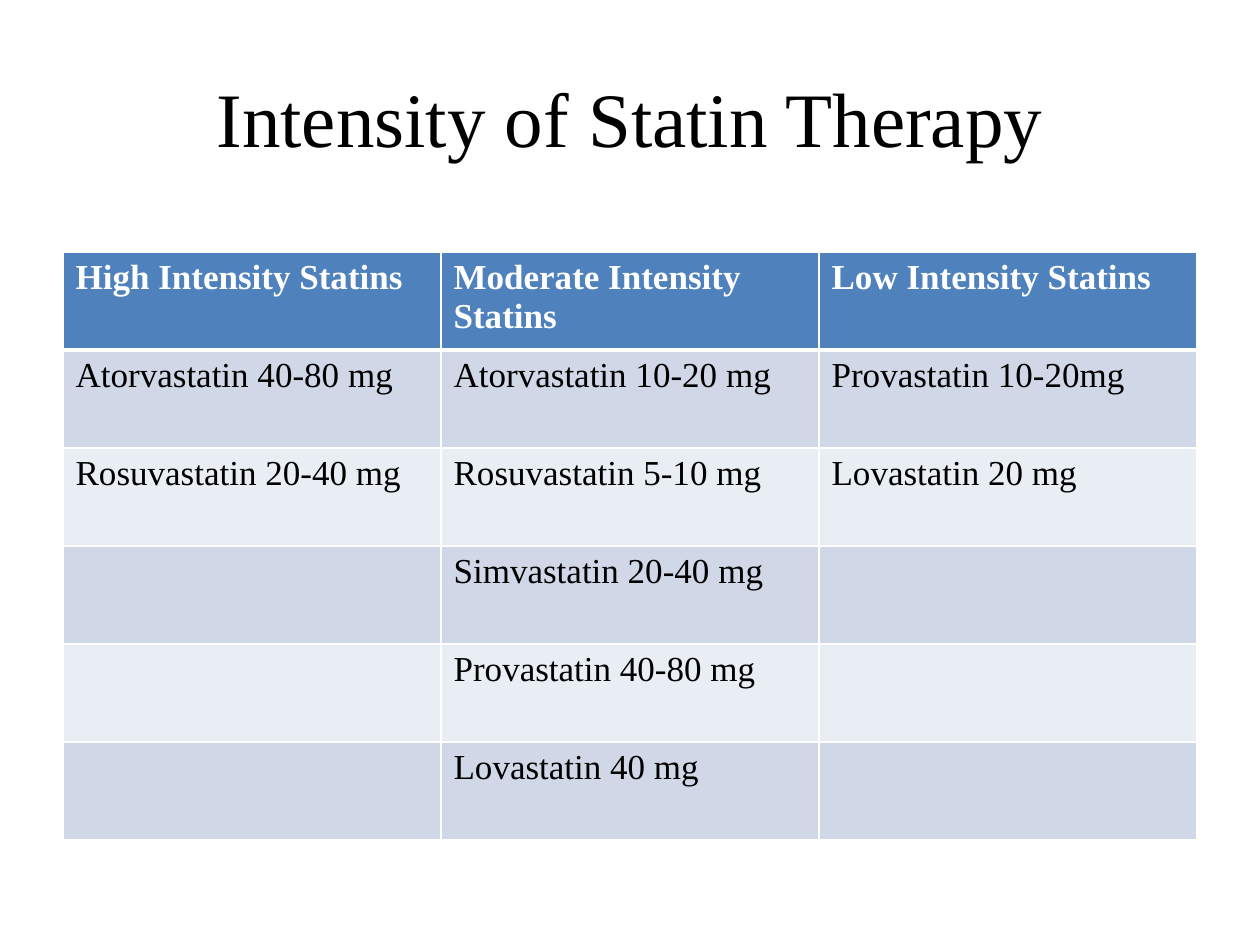
from lxml import etree
from pptx import Presentation
from pptx.dml.color import RGBColor
from pptx.enum.text import MSO_ANCHOR, PP_ALIGN
from pptx.oxml.ns import qn
from pptx.util import Inches, Pt

MIDDLE = MSO_ANCHOR.MIDDLE
CENTER = PP_ALIGN.CENTER
FONT = "Times New Roman"
COLORS = {
    "text": "000000",
    "header": "4F81BD",
    "header_text": "FFFFFF",
    "odd_row": "D0D8E8",
    "even_row": "E9EDF4",
    "border": "FFFFFF",
}
STATINS = {
    "High Intensity Statins": ["Atorvastatin 40-80 mg", "Rosuvastatin 20-40 mg"],
    "Moderate Intensity Statins": [
        "Atorvastatin 10-20 mg",
        "Rosuvastatin 5-10 mg",
        "Simvastatin 20-40 mg",
        "Provastatin 40-80 mg",
        "Lovastatin 40 mg",
    ],
    "Low Intensity Statins": ["Provastatin 10-20mg", "Lovastatin 20 mg"],
}


def format_text(paragraph, size, color, bold=False):
    """Style a paragraph and all of its runs."""
    for font in [paragraph.font] + [run.font for run in paragraph.runs]:
        font.name = FONT
        font.size = Pt(size)
        font.bold = bold
        font.color.rgb = RGBColor.from_string(COLORS[color])


def add_title(slide, text):
    """Add the centred slide title."""
    title = slide.shapes.add_textbox(Inches(0.5), Inches(0.3), Inches(9), Inches(1.25))
    frame = title.text_frame
    frame.word_wrap = True
    frame.vertical_anchor = MIDDLE
    frame.text = text
    frame.paragraphs[0].alignment = CENTER
    format_text(frame.paragraphs[0], 44, "text")


def set_borders(cell, top, bottom):
    """Draw the cell borders, with top and bottom widths in points."""
    properties = cell._tc.get_or_add_tcPr()
    widths = {"a:lnL": 1, "a:lnR": 1, "a:lnT": top, "a:lnB": bottom}
    for position, (side, width) in enumerate(widths.items()):
        line = etree.Element(qn(side), w=str(Pt(width)))
        fill = etree.SubElement(line, qn("a:solidFill"))
        etree.SubElement(fill, qn("a:srgbClr"), val=COLORS["border"])
        properties.insert(position, line)


def fill_cell(cell, text, row):
    """Write one table cell and style it according to its row."""
    header = row == 0
    band = "header" if header else "odd_row" if row % 2 else "even_row"
    cell.text = text
    format_text(cell.text_frame.paragraphs[0], 20, "header_text" if header else "text", header)
    cell.fill.solid()
    cell.fill.fore_color.rgb = RGBColor.from_string(COLORS[band])
    set_borders(cell, top=3 if row == 1 else 1, bottom=3 if header else 1)


def add_statin_table(slide, statins):
    """Add a table with one column for each intensity."""
    row_count = 1 + max(len(doses) for doses in statins.values())
    table = slide.shapes.add_table(
        row_count, len(statins), Inches(0.5), Inches(2), Inches(9), Inches(4.67)
    ).table
    for column, (intensity, doses) in enumerate(statins.items()):
        entries = [intensity, *doses]
        entries += [""] * (row_count - len(entries))
        for row, entry in enumerate(entries):
            fill_cell(table.cell(row, column), entry, row)


def main():
    """Build and save the statin therapy slide."""
    presentation = Presentation()
    presentation.slide_width = Inches(10)
    presentation.slide_height = Inches(7.5)
    slide = presentation.slides.add_slide(presentation.slide_layouts[6])
    add_title(slide, "Intensity of Statin Therapy")
    add_statin_table(slide, STATINS)
    presentation.save("out.pptx")


if __name__ == "__main__":
    main()
